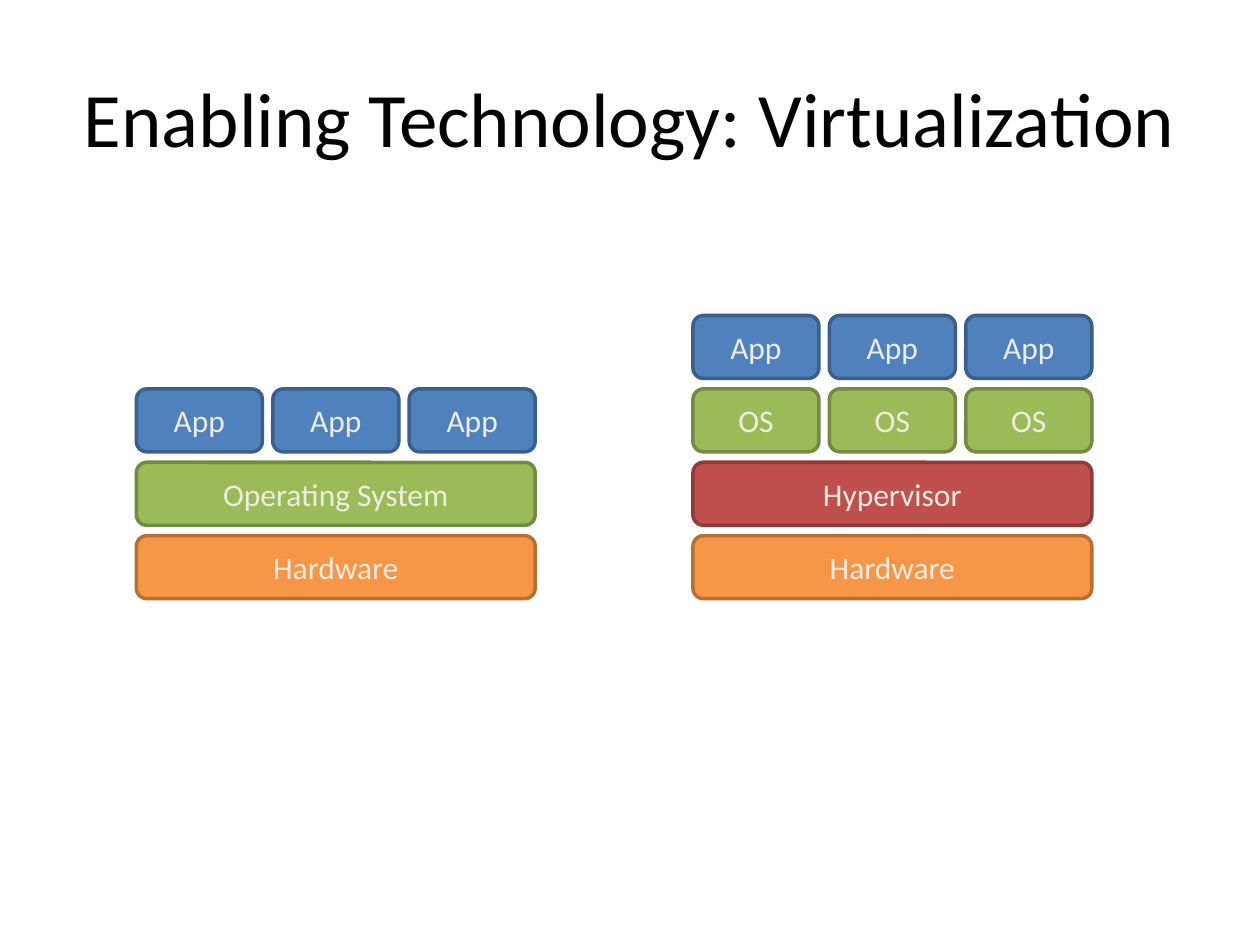
"""Build a slide comparing a plain and a virtualized software stack."""
from pptx import Presentation
from pptx.dml.color import RGBColor
from pptx.enum.shapes import MSO_SHAPE
from pptx.enum.text import MSO_ANCHOR, PP_ALIGN
from pptx.util import Cm, Pt

COLORS = {
    "title": "000000",
    "label": "EEECE1",
    "orange": "F79646",
    "orange_line": "B76F34",
    "green": "9BBB59",
    "green_line": "738A42",
    "red": "C0504D",
    "red_line": "8E3B39",
    "blue": "4F81BD",
    "blue_line": "3A5F8C",
}
FONT = "Calibri"
STACK_WIDTH, BOX_HEIGHT, GAP = 8.04, 1.27, 0.21
BOTTOM_ROW_TOP = 10.8

PLAIN_STACK = [
    ("Hardware", 1, "orange"),
    ("Operating System", 1, "green"),
    ("App", 3, "blue"),
]
VIRTUAL_STACK = [
    ("Hardware", 1, "orange"),
    ("Hypervisor", 1, "red"),
    ("OS", 3, "green"),
    ("App", 3, "blue"),
]


def rgb(name):
    return RGBColor.from_string(COLORS[name])


def set_text(sp, text, size, color):
    tf = sp.text_frame
    tf.text = text
    tf.word_wrap = True
    tf.vertical_anchor = MSO_ANCHOR.MIDDLE
    p = tf.paragraphs[0]
    p.alignment = PP_ALIGN.CENTER
    r = p.runs[0]
    r.font.name = FONT
    r.font.size = Pt(size)
    r.font.color.rgb = rgb(color)


def add_title(s, text):
    sp = s.shapes.title
    sp.left, sp.top, sp.width, sp.height = Cm(1.27), Cm(0.76), Cm(22.86), Cm(3.18)
    set_text(sp, text, 44, "title")


def add_box(shapes, text, left, top, width, color):
    sp = shapes.add_shape(MSO_SHAPE.ROUNDED_RECTANGLE,
                          Cm(left), Cm(top), Cm(width), Cm(BOX_HEIGHT))
    sp.shadow.inherit = False
    sp.fill.solid()
    sp.fill.fore_color.rgb = rgb(color)
    sp.line.color.rgb = rgb(f"{color}_line")
    sp.line.width = Pt(2)
    set_text(sp, text, 18, "label")


def add_stack(s, left, layers):
    group = s.shapes.add_group_shape()
    for row, (text, count, color) in enumerate(layers):
        top = BOTTOM_ROW_TOP - row * (BOX_HEIGHT + GAP)
        width = (STACK_WIDTH - (count - 1) * GAP) / count
        for col in range(count):
            add_box(group.shapes, text, left + col * (width + GAP), top, width, color)


def main():
    prs = Presentation()
    prs.slide_width, prs.slide_height = Cm(25.4), Cm(19.05)
    s = prs.slides.add_slide(prs.slide_layouts[5])
    add_title(s, "Enabling Technology: Virtualization")
    add_stack(s, 2.75, PLAIN_STACK)
    add_stack(s, 13.97, VIRTUAL_STACK)
    prs.save("out.pptx")


if __name__ == "__main__":
    main()
